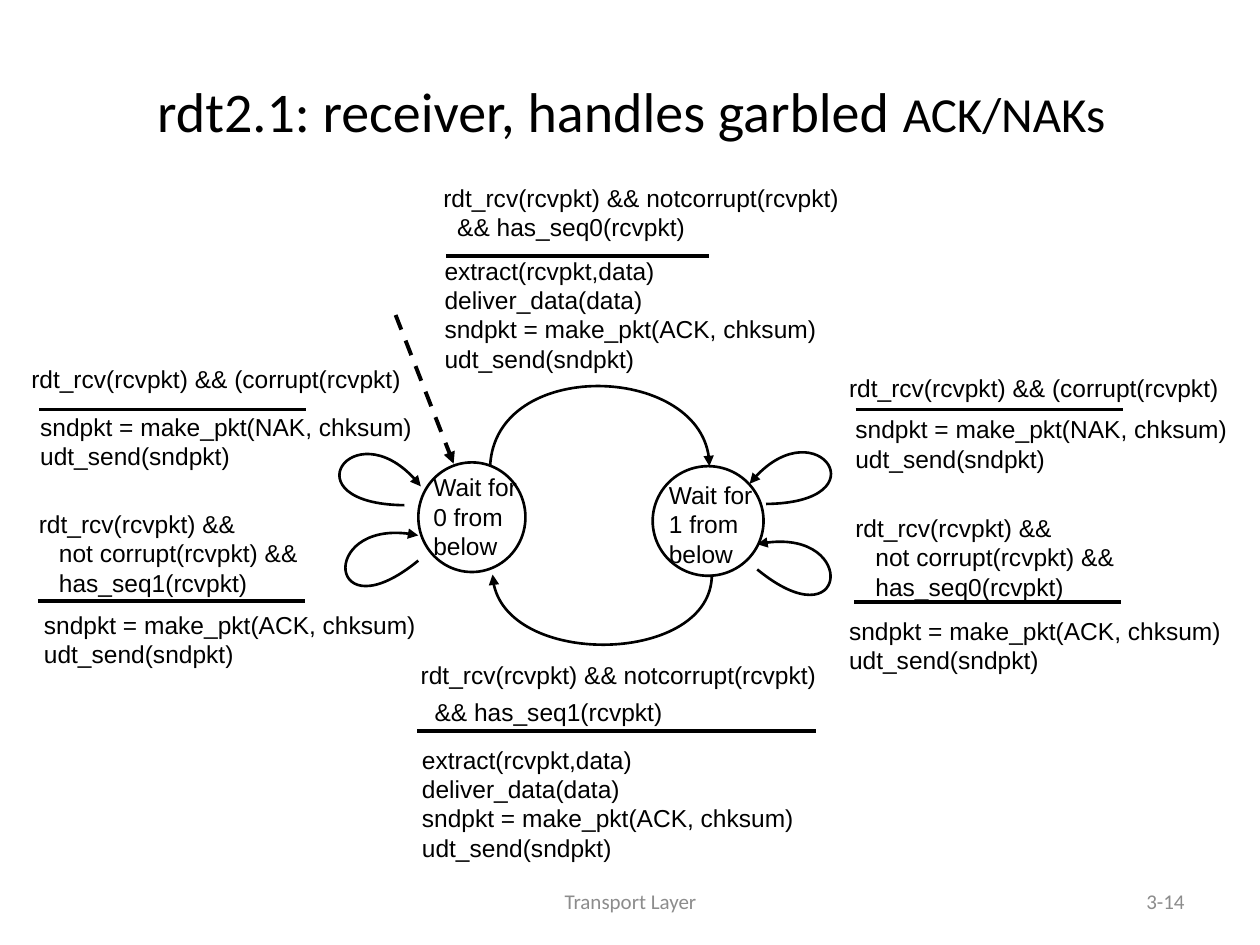
from lxml.etree import SubElement
from pptx import Presentation
from pptx.dml.color import RGBColor
from pptx.enum.dml import MSO_LINE
from pptx.enum.shapes import MSO_CONNECTOR, MSO_SHAPE
from pptx.enum.text import MSO_ANCHOR, PP_ALIGN
from pptx.oxml.ns import qn
from pptx.util import Inches, Pt

COLORS = {"ink": "000000", "paper": "FFFFFF", "muted": "8C8C8C"}
COLUMNS, ROWS = 100, 75
RECEIVED = "rdt_rcv(rcvpkt) &&"
CORRUPT = [f"{RECEIVED} (corrupt(rcvpkt)"]
INTACT = f"{RECEIVED} notcorrupt(rcvpkt)"
DELIVER = ["extract(rcvpkt,data)", "deliver_data(data)"]


def reply(kind):
    """Return the two lines that answer with an ACK or a NAK."""
    return [f"sndpkt = make_pkt({kind}, chksum)", "udt_send(sndpkt)"]


def duplicate(number):
    """Return the condition for an intact packet with a repeated number."""
    return [RECEIVED, "not corrupt(rcvpkt) &&", f"has_seq{number}(rcvpkt)"]


class StateDiagram:
    """Draw a state machine on one slide, measured in grid columns and rows."""

    def __init__(self):
        """Open a deck with one title-only page."""
        self.deck = Presentation()
        self.deck.slide_width, self.deck.slide_height = Inches(10), Inches(7.5)
        self.page = self.deck.slides.add_slide(self.deck.slide_layouts[5])
        self.shapes = self.page.shapes

    def place(self, *lengths):
        """Turn alternating columns and rows into slide lengths."""
        units = (self.deck.slide_width / COLUMNS, self.deck.slide_height / ROWS)
        return [round(length * units[i % 2]) for i, length in enumerate(lengths)]

    def font(self, font, size, name="Arial", color="ink"):
        """Set the size, typeface and colour of a font."""
        font.size, font.name = Pt(size), name
        font.color.rgb = RGBColor.from_string(COLORS[color])

    def title(self, area, spans):
        """Fill the title placeholder with sized spans."""
        box = self.shapes.title
        box.left, box.top, box.width, box.height = self.place(*area)
        box.text_frame.vertical_anchor = MSO_ANCHOR.MIDDLE
        para = box.text_frame.paragraphs[0]
        para.alignment = PP_ALIGN.CENTER
        for text, size in spans:
            span = para.add_run()
            span.text = text
            self.font(span.font, size, "Calibri")

    def text(self, area, lines, hang=0, gap=0):
        """Add a text box whose later lines may be indented and spaced."""
        box = self.shapes.add_textbox(*self.place(*area))
        frame = box.text_frame
        frame.word_wrap = True
        frame.text = "\n".join(lines)
        for index, para in enumerate(frame.paragraphs):
            self.font(para.font, 14)
            if index and hang:
                para._p.get_or_add_pPr().set("marL", str(self.place(hang)[0]))
            if index and gap:
                para.space_before = Pt(gap)
        return box

    def footer(self, area, text, alignment):
        """Add a muted footer text."""
        frame = self.text(area, [text]).text_frame
        frame.vertical_anchor = MSO_ANCHOR.MIDDLE
        frame.paragraphs[0].alignment = alignment
        self.font(frame.paragraphs[0].font, 12, "Calibri", "muted")

    def stroke(self, shape, width, arrow=None):
        """Style an outline and add an arrowhead at headEnd or tailEnd."""
        shape.line.color.rgb = RGBColor.from_string(COLORS["ink"])
        shape.line.width = Pt(width)
        if arrow:
            SubElement(shape.line._get_or_add_ln(), qn(f"a:{arrow}"), type="triangle")

    def straight(self, start, end, dash=None, arrow=None):
        """Add a straight line."""
        line = self.shapes.add_connector(MSO_CONNECTOR.STRAIGHT, *self.place(*start, *end))
        SubElement(line._element.spPr, qn("a:effectLst"))
        if dash:
            line.line.dash_style = dash
        self.stroke(line, 2.25, arrow)

    def curve(self, points, arrow):
        """Add an open cubic curve from a start, two controls and an end."""
        start, *others = [self.place(*point) for point in points]
        builder = self.shapes.build_freeform(*start)
        builder.add_line_segments(others, close=False)
        shape = builder.convert_to_shape()
        outline = next(shape._element.iter(qn("a:path")))
        cubic = SubElement(outline, qn("a:cubicBezTo"))
        for segment in outline.findall(qn("a:lnTo")):
            cubic.append(segment[0])
            outline.remove(segment)
        shape.fill.background()
        shape.shadow.inherit = False
        self.stroke(shape, 1.5, arrow)

    def state(self, circle_area, label_area, number):
        """Add a state circle grouped with its label."""
        circle = self.shapes.add_shape(MSO_SHAPE.OVAL, *self.place(*circle_area))
        circle.fill.solid()
        circle.fill.fore_color.rgb = RGBColor.from_string(COLORS["paper"])
        circle.shadow.inherit = False
        self.stroke(circle, 1.5)
        label = self.text(label_area, ["Wait for", f"{number} from below"])
        self.shapes.add_group_shape([circle, label])

    def transition(self, condition_area, condition, rule, action_area, action, hang=0, gap=0):
        """Add a condition, the rule under it and the action below."""
        left, right, row = rule
        self.text(condition_area, condition, hang, gap)
        self.straight((left, row), (right, row))
        self.text(action_area, action)


def main():
    """Build and save the receiver slide."""
    diagram = StateDiagram()
    diagram.title((4.6, 2.5, 91, 12.5),
                  [("rdt2.1: receiver, handles garbled ", 32), ("ACK/NAKs", 28)])
    diagram.footer((34.2, 69.5, 31.7, 4), "Transport Layer", PP_ALIGN.CENTER)
    diagram.footer((71.7, 69.5, 23.3, 4), "3-14", PP_ALIGN.RIGHT)

    diagram.state((33.2, 36.7, 8.5, 8.7), (33.4, 37, 8.8, 6.7), 0)
    diagram.state((51.8, 37, 8.8, 8.7), (52.1, 37.6, 8.8, 6.7), 1)
    diagram.straight((31.4, 25), (36, 36.8), MSO_LINE.DASH, "tailEnd")

    curves = [
        ([(38.9, 37), (39.3, 28.4), (56.3, 28.9), (56.3, 37)], "tailEnd"),
        ([(39.1, 45.6), (39.4, 53.1), (56.5, 52.7), (56.5, 45.6)], "headEnd"),
        ([(60.8, 40), (70.1, 39.9), (64.6, 32), (59.5, 38.4)], "tailEnd"),
        ([(60.1, 45.2), (67.3, 51.1), (68.2, 41.5), (60.1, 43.2)], "tailEnd"),
        ([(33.2, 44.5), (26, 50.4), (25.2, 40.8), (33.2, 42.5)], "tailEnd"),
        ([(32.1, 40.1), (22.8, 40), (28.3, 32.1), (33.4, 38.6)], "tailEnd"),
    ]
    for points, arrow in curves:
        diagram.curve(points, arrow)

    diagram.transition((34.2, 14, 43.5, 6.2), [INTACT, "&& has_seq0(rcvpkt)"],
                       (35.4, 56.3, 20.3),
                       (34.3, 19.8, 38, 7.7), DELIVER + reply("ACK"), hang=1.1)
    diagram.transition((32.4, 51.9, 39.2, 6.2), [INTACT, "&& has_seq1(rcvpkt)"],
                       (33.1, 64.8, 58),
                       (32.5, 58.6, 42.1, 10.9), DELIVER + reply("ACK"), hang=1.1, gap=4)
    diagram.transition((1.5, 28.4, 31.4, 6.7), CORRUPT, (3.1, 24.3, 32.5),
                       (2.2, 32.2, 33.1, 4.5), reply("NAK"))
    diagram.transition((66.4, 29.1, 31.4, 6.7), CORRUPT, (67.9, 89.1, 32.5),
                       (66.9, 32.4, 33.1, 4.5), reply("NAK"))
    diagram.transition((2.1, 39.9, 28.7, 6.7), duplicate(1), (3, 24.2, 47.7),
                       (2.5, 47.9, 32.2, 4.5), reply("ACK"), hang=1.6)
    diagram.transition((66.9, 40.2, 28.7, 6.7), duplicate(0), (67.8, 89, 47.8),
                       (66.4, 48.4, 32.2, 4.5), reply("ACK"), hang=1.6)
    diagram.deck.save("out.pptx")


if __name__ == "__main__":
    main()
